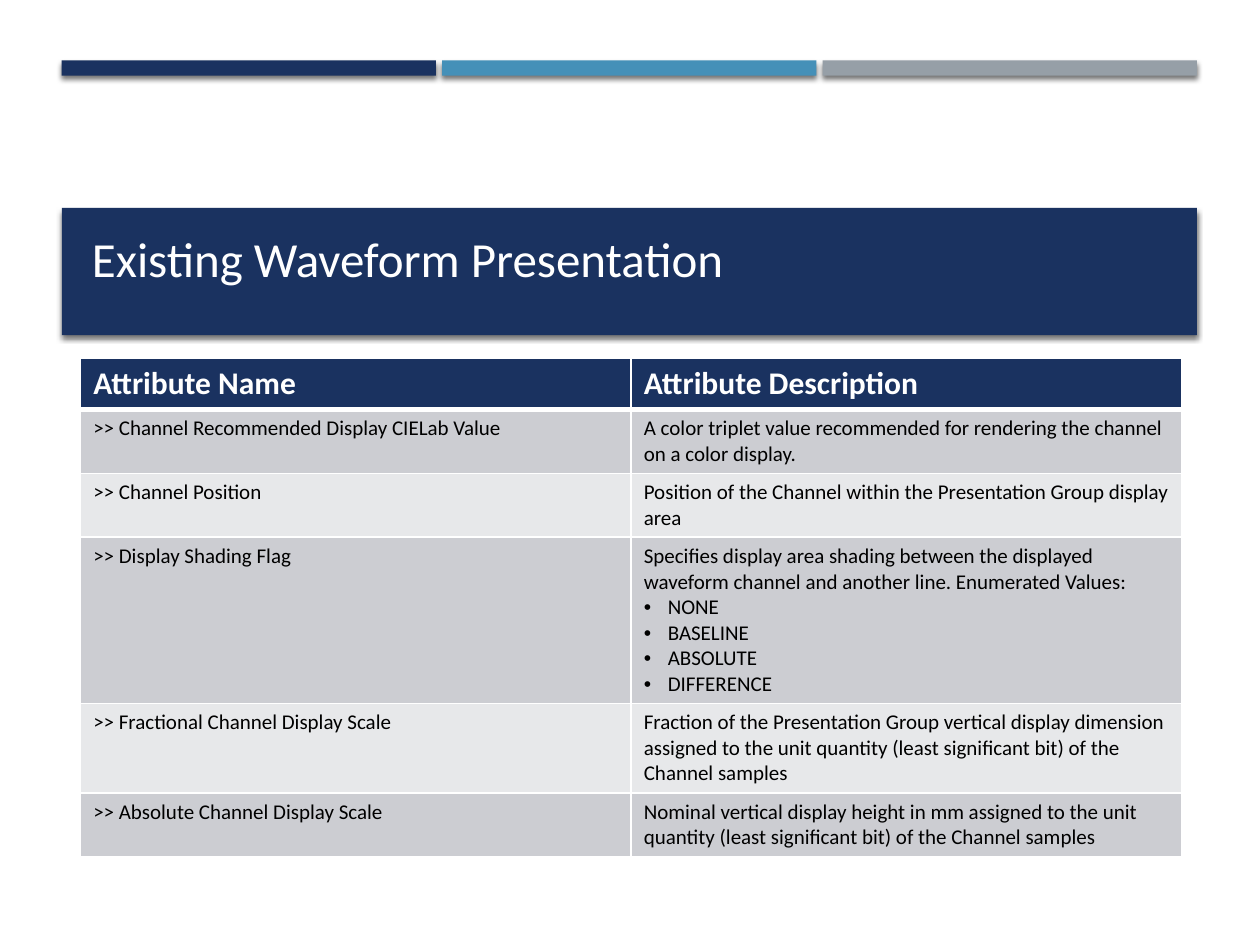
"""Build the slide that tabulates existing waveform presentation attributes."""
from pptx import Presentation
from pptx.dml.color import RGBColor
from pptx.enum.shapes import MSO_SHAPE
from pptx.enum.text import MSO_ANCHOR, MSO_AUTO_SIZE, PP_ALIGN
from pptx.oxml import parse_xml
from pptx.oxml.ns import nsdecls
from pptx.util import Inches, Pt

NAVY = RGBColor(0x1A, 0x32, 0x60)
BLUE = RGBColor(0x45, 0x90, 0xB8)
GRAY = RGBColor(0x96, 0x9F, 0xA7)
DARK_BAND = RGBColor(0xCC, 0xCD, 0xD2)
LIGHT_BAND = RGBColor(0xE7, 0xE8, 0xEA)
WHITE = RGBColor(0xFF, 0xFF, 0xFF)
BLACK = RGBColor(0x00, 0x00, 0x00)

BULLET = "• "
ROWS = [
    (0.41, "Attribute Name", ["Attribute Description"]),
    (0.5, ">> Channel Recommended Display CIELab Value",
     ["A color triplet value recommended for rendering the channel on a color display."]),
    (0.5, ">> Channel Position",
     ["Position of the Channel within the Presentation Group display area"]),
    (1.3, ">> Display Shading Flag",
     ["Specifies display area shading between the displayed waveform channel "
      "and another line. Enumerated Values:",
      "• NONE", "• BASELINE", "• ABSOLUTE", "• DIFFERENCE"]),
    (0.7, ">> Fractional Channel Display Scale",
     ["Fraction of the Presentation Group vertical display dimension",
      "assigned to the unit quantity (least significant bit) of the Channel samples"]),
    (0.5, ">> Absolute Channel Display Scale",
     ["Nominal vertical display height in mm assigned to the unit quantity "
      "(least significant bit) of the Channel samples"]),
]


def set_font(font, color, **values):
    font.color.rgb = color
    for name, value in {"name": "Calibri", **values}.items():
        setattr(font, name, value)


def add_border(cell, side, width):
    cell._tc.get_or_add_tcPr().append(parse_xml(
        f'<a:ln{side} {nsdecls("a")} w="{Pt(width)}"><a:solidFill>'
        f'<a:srgbClr val="{WHITE}"/></a:solidFill></a:ln{side}>'))


deck = Presentation()
deck.slide_width, deck.slide_height = Inches(10), Inches(7.5)
page = deck.slides.add_slide(deck.slide_layouts[5])

bands = [(0.49 + 3.02 * column, 0.48, 2.97, 0.12, color)
         for column, color in enumerate((NAVY, BLUE, GRAY))]
bands.append((0.49, 1.65, 9.01, 1.01, NAVY))
for left, top, width, height, color in bands:
    band = page.shapes.add_shape(MSO_SHAPE.RECTANGLE, Inches(left), Inches(top),
                                 Inches(width), Inches(height))
    band.fill.solid()
    band.fill.fore_color.rgb = color
    band.line.fill.background()
    band._element.spPr.append(parse_xml(
        f'<a:effectLst {nsdecls("a")}><a:outerShdw blurRad="{Pt(3)}" dist="{Pt(2)}" '
        'dir="5400000" rotWithShape="0"><a:srgbClr val="000000"><a:alpha val="55000"/>'
        '</a:srgbClr></a:outerShdw></a:effectLst>'))

title = page.shapes.title
page.shapes._spTree.append(title._element)
title.left, title.top = Inches(0.63), Inches(1.42)
title.width, title.height = Inches(8.74), Inches(0.91)
title.text = "Existing Waveform Presentation"
frame_format = {"word_wrap": True, "auto_size": MSO_AUTO_SIZE.NONE,
                "vertical_anchor": MSO_ANCHOR.BOTTOM}
for name, value in frame_format.items():
    setattr(title.text_frame, name, value)
title_para = title.text_frame.paragraphs[0]
title_para.alignment = PP_ALIGN.LEFT
set_font(title_para.runs[0].font, WHITE, size=Pt(28))

table = page.shapes.add_table(len(ROWS), 2, Inches(0.64), Inches(2.84),
                              Inches(8.74), Inches(3.91)).table
for row, (height, attribute, description) in enumerate(ROWS):
    table.rows[row].height = Inches(height)
    header = row == 0
    fill = NAVY if header else DARK_BAND if row % 2 else LIGHT_BAND
    for column, lines in enumerate(([attribute], description)):
        cell = table.cell(row, column)
        widths = {"L": 0.96, "R": 0.96, "T": 3 if row == 1 else 0.96,
                  "B": 3 if header else 0.96}
        for side, width in widths.items():
            add_border(cell, side, width)
        cell.fill.solid()
        cell.fill.fore_color.rgb = fill
        cell.text = "\n".join(line.removeprefix(BULLET) for line in lines)
        for para, line in zip(cell.text_frame.paragraphs, lines):
            if line.startswith(BULLET):
                properties = para._p.get_or_add_pPr()
                properties.set("marL", str(Inches(0.19)))
                properties.set("indent", str(Inches(-0.19)))
                for bullet in ('buFont {} typeface="Arial"', 'buChar {} char="•"'):
                    properties.append(parse_xml(f'<a:{bullet.format(nsdecls("a"))}/>'))
            set_font(para.runs[0].font, WHITE if header else BLACK,
                     size=Pt(18 if header else 12), bold=header)

deck.save("out.pptx")
